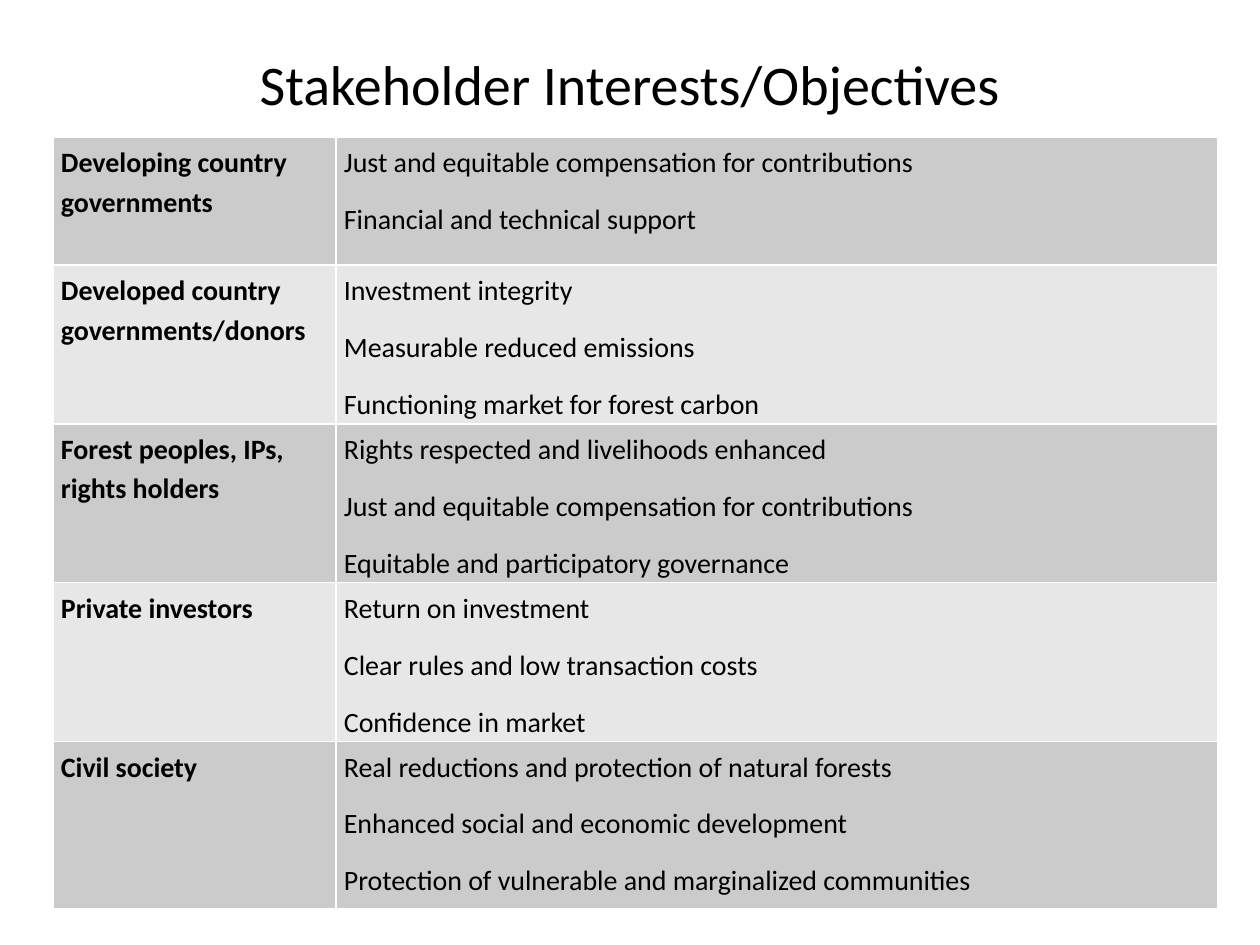
from dataclasses import dataclass

from lxml import etree
from pptx import Presentation
from pptx.dml.color import RGBColor
from pptx.enum.text import MSO_ANCHOR, PP_ALIGN
from pptx.oxml.ns import qn
from pptx.util import Emu, Pt

CENTER = PP_ALIGN.CENTER
LEFT = PP_ALIGN.LEFT
MIDDLE = MSO_ANCHOR.MIDDLE
BLANK_LAYOUT = 6
EMU_PER_PX = 914400 / 126


@dataclass(frozen=True)
class Theme:
    font: str = "Calibri"
    ink: str = "000000"
    border: str = "FFFFFF"
    bands: tuple = ("CBCBCB", "E7E7E7")
    title_size: int = 32
    table_size: int = 16
    border_width: int = 1


def px(length):
    return Emu(round(length * EMU_PER_PX))


def apply(target, values):
    for name, value in values.items():
        setattr(target, name, value)


class SlideBuilder:
    def __init__(self, slide, theme):
        self.slide = slide
        self.theme = theme

    def add_lines(self, frame, lines, size, bold=False, **para_format):
        for index, line in enumerate(lines):
            para = frame.paragraphs[0] if index == 0 else frame.add_paragraph()
            apply(para, para_format)
            span = para.add_run()
            span.text = line
            apply(span.font, {"name": self.theme.font, "size": Pt(size), "bold": bold})
            span.font.color.rgb = RGBColor.from_string(self.theme.ink)

    def title(self, text, left, top, width, height, bottom_inset):
        box = self.slide.shapes.add_textbox(*map(px, (left, top, width, height)))
        apply(box.text_frame, {"word_wrap": True, "vertical_anchor": MIDDLE,
                               "margin_bottom": px(bottom_inset)})
        self.add_lines(box.text_frame, [text], self.theme.title_size, alignment=CENTER)

    def borders(self, cell):
        properties = cell._tc.get_or_add_tcPr()
        for side in ("a:lnL", "a:lnR", "a:lnT", "a:lnB"):
            line = etree.SubElement(properties, qn(side),
                                    w=str(int(Pt(self.theme.border_width))))
            fill = etree.SubElement(line, qn("a:solidFill"))
            etree.SubElement(fill, qn("a:srgbClr"), val=self.theme.border)

    def cell(self, cell, lines, color, bold):
        apply(cell, {"margin_left": px(8), "margin_right": px(8),
                     "margin_top": px(4), "margin_bottom": px(4)})
        self.borders(cell)
        cell.fill.solid()
        cell.fill.fore_color.rgb = RGBColor.from_string(color)
        self.add_lines(cell.text_frame, lines, self.theme.table_size, bold,
                       alignment=LEFT, line_spacing=1.15, space_after=Pt(10))

    def table(self, entries, left, top, widths, heights):
        """Draw one banded row per (heading, lines) entry."""
        frame = self.slide.shapes.add_table(
            len(entries), len(widths),
            *map(px, (left, top, sum(widths), sum(heights))))
        table = frame.table
        apply(table, {"first_row": False, "horz_banding": False})
        for column, width in zip(table.columns, widths):
            column.width = px(width)
        for index, (heading, lines) in enumerate(entries):
            table.rows[index].height = px(heights[index])
            color = self.theme.bands[index % len(self.theme.bands)]
            self.cell(table.cell(index, 0), [heading], color, bold=True)
            self.cell(table.cell(index, 1), lines, color, bold=False)


STAKEHOLDERS = [
    ("Developing country governments", [
        "Just and equitable compensation for contributions",
        "Financial and technical support"]),
    ("Developed country governments/donors", [
        "Investment integrity",
        "Measurable reduced emissions",
        "Functioning market for forest carbon"]),
    ("Forest peoples, IPs, rights holders", [
        "Rights respected and livelihoods enhanced",
        "Just and equitable compensation for contributions",
        "Equitable and participatory governance"]),
    ("Private investors", [
        "Return on investment",
        "Clear rules and low transaction costs",
        "Confidence in market"]),
    ("Civil society", [
        "Real reductions and protection of natural forests",
        "Enhanced social and economic development",
        "Protection of vulnerable and marginalized communities"]),
]


def main():
    deck = Presentation()
    apply(deck, {"slide_width": px(1260), "slide_height": px(945)})
    slide = deck.slides.add_slide(deck.slide_layouts[BLANK_LAYOUT])
    builder = SlideBuilder(slide, Theme())
    builder.title("Stakeholder Interests/Objectives", 63, 38, 1134, 158, bottom_inset=74)
    builder.table(STAKEHOLDERS, 53, 137, widths=(283, 882),
                  heights=(128, 156, 156, 156, 167))
    deck.save("out.pptx")


if __name__ == "__main__":
    main()
